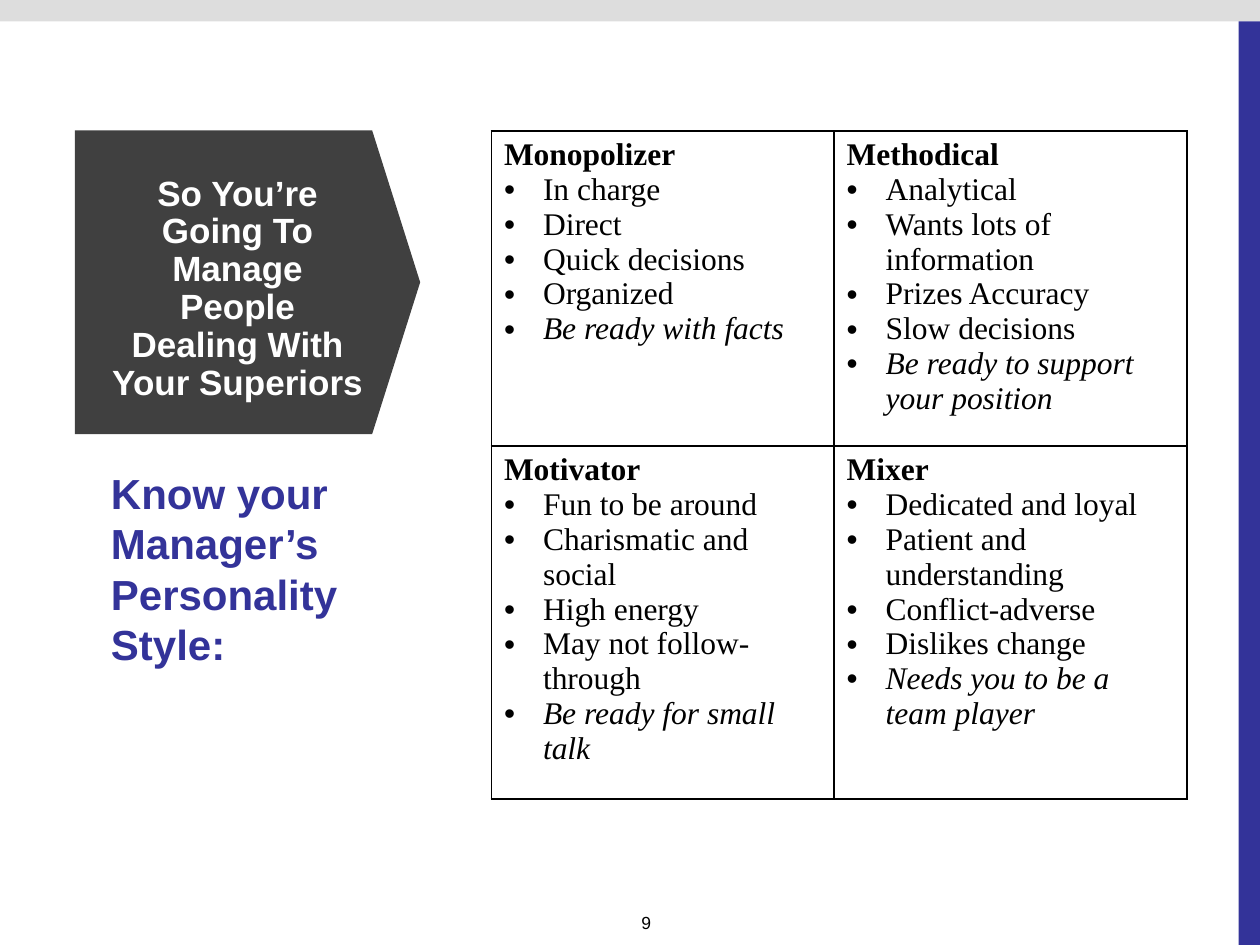
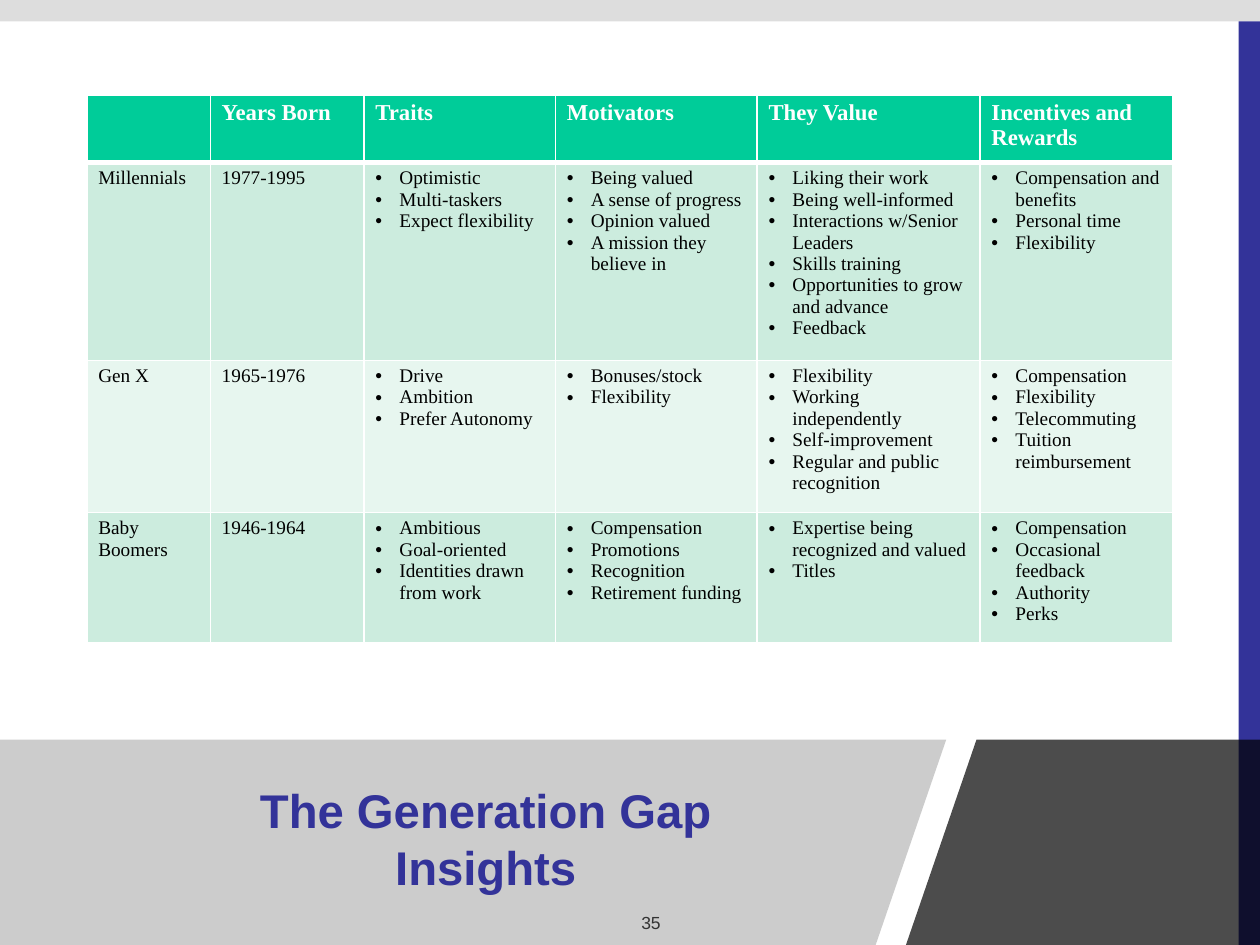
"""Build two training slides: manager personality styles and generation gaps."""
from dataclasses import dataclass

from lxml import etree
from pptx import Presentation
from pptx.dml.color import RGBColor
from pptx.enum.shapes import MSO_SHAPE
from pptx.enum.text import MSO_ANCHOR, PP_ALIGN
from pptx.oxml.ns import qn
from pptx.util import Inches, Pt

RECTANGLE = MSO_SHAPE.RECTANGLE
DOWN_ARROW = MSO_SHAPE.DOWN_ARROW
TOP, MIDDLE = MSO_ANCHOR.TOP, MSO_ANCHOR.MIDDLE
LEFT, CENTER = PP_ALIGN.LEFT, PP_ALIGN.CENTER

NAVY, CHARCOAL, SILVER = "333399", "404040", "DDDDDD"
BLACK, WHITE, GRAY = "000000", "FFFFFF", "808080"
GREEN, MINT, PALE_MINT = "00CC99", "CCECDE", "E7F6EF"
SANS, SERIF = "Arial", "Times New Roman"


@dataclass(frozen=True)
class Box:
    """A position and size in inches."""
    left: float
    top: float
    width: float
    height: float

    def lengths(self) -> tuple:
        """Return left, top, width and height as lengths."""
        return tuple(map(Inches, (self.left, self.top, self.width, self.height)))


@dataclass(frozen=True)
class TextStyle:
    """The look of a run."""
    size: float
    color: str
    bold: bool = False
    italic: bool = False
    font: str = SERIF


@dataclass(frozen=True)
class CellLayout:
    """Margins, bullet indent and border colour of a table's cells."""
    side: float
    edge: float
    indent: float
    border: str


@dataclass(frozen=True)
class PersonalityStyle:
    """A manager's style, its traits and the advice for it."""
    name: str
    traits: tuple
    advice: str


@dataclass(frozen=True)
class Generation:
    """A generation, its birth years and its four bulleted lists."""
    name: str
    years: str
    lists: tuple


PAGE_NUMBER = TextStyle(10, BLACK, font=SANS)
ARROW_TITLE = TextStyle(20, WHITE, bold=True, font=SANS)
SUBTITLE = TextStyle(24, NAVY, bold=True, font=SANS)
BAND_TITLE = TextStyle(27, NAVY, bold=True, font=SANS)
STYLE_NAME = TextStyle(18, BLACK, bold=True)
STYLE_TRAIT = TextStyle(18, BLACK)
STYLE_ADVICE = TextStyle(18, BLACK, italic=True)
HEADER = TextStyle(13, WHITE, bold=True)
DETAIL = TextStyle(11, BLACK)

STYLE_LAYOUT = CellLayout(0.1, 0.05, 0.31, BLACK)
GENERATION_LAYOUT = CellLayout(0.09, 0.04, 0.19, WHITE)

PERSONALITY_GRID = (
    (PersonalityStyle("Monopolizer",
                      ("In charge", "Direct", "Quick decisions", "Organized"),
                      "Be ready with facts"),
     PersonalityStyle("Methodical",
                      ("Analytical", "Wants lots of information",
                       "Prizes Accuracy", "Slow decisions"),
                      "Be ready to support your position")),
    (PersonalityStyle("Motivator",
                      ("Fun to be around", "Charismatic and social",
                       "High energy", "May not follow-through"),
                      "Be ready for small talk"),
     PersonalityStyle("Mixer",
                      ("Dedicated and loyal", "Patient and understanding",
                       "Conflict-adverse", "Dislikes change"),
                      "Needs you to be a team player")),
)

HEADINGS = ("", "Years Born", "Traits", "Motivators", "They Value",
            "Incentives and Rewards")
GENERATIONS = (
    Generation("Millennials", "1977-1995", (
        ("Optimistic", "Multi-taskers", "Expect flexibility"),
        ("Being valued", "A sense of progress", "Opinion valued",
         "A mission they believe in"),
        ("Liking their work", "Being well-informed",
         "Interactions w/Senior Leaders", "Skills training",
         "Opportunities to grow and advance", "Feedback"),
        ("Compensation and benefits", "Personal time", "Flexibility"))),
    Generation("Gen X", "1965-1976", (
        ("Drive", "Ambition", "Prefer Autonomy"),
        ("Bonuses/stock", "Flexibility"),
        ("Flexibility", "Working independently", "Self-improvement",
         "Regular and public recognition"),
        ("Compensation", "Flexibility", "Telecommuting",
         "Tuition reimbursement"))),
    Generation("Baby Boomers", "1946-1964", (
        ("Ambitious", "Goal-oriented", "Identities drawn from work"),
        ("Compensation", "Promotions", "Recognition", "Retirement funding"),
        ("Expertise being recognized and valued", "Titles"),
        ("Compensation", "Occasional feedback", "Authority", "Perks"))),
)


def rgb(color: str) -> RGBColor:
    """Turn a hex string into a colour."""
    return RGBColor.from_string(color)


def paint(shape, color: str, opacity: int = 100) -> None:
    """Fill a shape without line or shadow, at an opacity in percent."""
    shape.shadow.inherit = False
    shape.line.fill.background()
    shape.fill.solid()
    shape.fill.fore_color.rgb = rgb(color)
    if opacity < 100:
        fill_color = shape.element.spPr.find(f".//{qn('a:srgbClr')}")
        etree.SubElement(fill_color, qn("a:alpha"), val=str(opacity * 1000))


def add_block(slide, kind, box: Box, color: str):
    """Add a plain preset shape."""
    shape = slide.shapes.add_shape(kind, *box.lengths())
    paint(shape, color)
    return shape


def add_panel(slide, points: tuple, color: str, opacity: int) -> None:
    """Add a translucent polygon through points in inches."""
    corners = [(Inches(x), Inches(y)) for x, y in points]
    builder = slide.shapes.build_freeform(*corners[0])
    builder.add_line_segments(corners[1:], close=True)
    paint(builder.convert_to_shape(), color, opacity)


def add_run(paragraph, text: str, style: TextStyle) -> None:
    """Add one styled run."""
    run = paragraph.add_run()
    run.text = text
    run.font.name = style.font
    run.font.size = Pt(style.size)
    run.font.bold = style.bold
    run.font.italic = style.italic
    run.font.color.rgb = rgb(style.color)


def add_text(slide, box: Box, lines: tuple, style: TextStyle, anchor=TOP,
             alignment=LEFT, spacing: float = 1.0) -> None:
    """Add a text box holding one paragraph with line breaks."""
    frame = slide.shapes.add_textbox(*box.lengths()).text_frame
    frame.word_wrap = True
    frame.vertical_anchor = anchor
    frame.margin_left = frame.margin_right = Inches(0.09)
    frame.margin_top = frame.margin_bottom = Inches(0.04)
    paragraph = frame.paragraphs[0]
    paragraph.alignment = alignment
    paragraph.line_spacing = spacing
    for index, line in enumerate(lines):
        if index:
            paragraph.add_line_break()
        add_run(paragraph, line, style)


def add_bullet(paragraph, indent: float) -> None:
    """Give a paragraph a hanging round bullet."""
    properties = paragraph._p.get_or_add_pPr()
    properties.set("marL", str(Inches(indent)))
    properties.set("indent", str(-Inches(indent)))
    etree.SubElement(properties, qn("a:buFont"), typeface=SANS)
    etree.SubElement(properties, qn("a:buChar"), char="•")


def add_borders(cell, color: str, bottom: float = 1, top: float = 1) -> None:
    """Draw the four borders of a cell, with widths in points."""
    properties = cell._tc.get_or_add_tcPr()
    for side, width in (("L", 1), ("R", 1), ("T", top), ("B", bottom)):
        line = etree.SubElement(properties, qn(f"a:ln{side}"), w=str(Pt(width)))
        fill = etree.SubElement(line, qn("a:solidFill"))
        etree.SubElement(fill, qn("a:srgbClr"), val=color)


def fill_cell(cell, entries: list, layout: CellLayout, color: str = "") -> None:
    """Write (text, style, bulleted) entries into a cell and colour it."""
    cell.margin_left = cell.margin_right = Inches(layout.side)
    cell.margin_top = cell.margin_bottom = Inches(layout.edge)
    if color:
        cell.fill.solid()
        cell.fill.fore_color.rgb = rgb(color)
    else:
        cell.fill.background()
    frame = cell.text_frame
    for index, (text, style, bulleted) in enumerate(entries):
        paragraph = frame.add_paragraph() if index else frame.paragraphs[0]
        if bulleted:
            add_bullet(paragraph, layout.indent)
        if text:
            add_run(paragraph, text, style)


def add_grid(slide, left: float, top: float, widths: tuple, heights: tuple):
    """Add an unbanded table with the given column widths and row heights."""
    box = Box(left, top, sum(widths), sum(heights))
    table = slide.shapes.add_table(len(heights), len(widths), *box.lengths()).table
    table.first_row = table.horz_banding = False
    for column, width in zip(table.columns, widths):
        column.width = Inches(width)
    for row, height in zip(table.rows, heights):
        row.height = Inches(height)
    return table


def add_base_slide(presentation, number: int):
    """Add a blank slide with the top band, side band and page number."""
    slide = presentation.slides.add_slide(presentation.slide_layouts[6])
    add_block(slide, RECTANGLE, Box(0, 0, 10, 0.17), SILVER)
    add_block(slide, RECTANGLE, Box(9.83, 0.17, 0.17, 7.33), NAVY)
    add_text(slide, Box(5, 7.2, 0.5, 0.25), (str(number),), PAGE_NUMBER)
    return slide


def build_personality_slide(presentation) -> None:
    """Build the slide on managers' personality styles."""
    slide = add_base_slide(presentation, 9)
    arrow = add_block(slide, DOWN_ARROW, Box(0.76, 0.87, 2.41, 2.74), CHARCOAL)
    arrow.rotation = 270
    arrow.adjustments[0], arrow.adjustments[1] = 1, 0.158
    add_text(slide, Box(0.79, 1.32, 2.19, 1.95),
             ("So You’re Going To Manage People", "Dealing With Your Superiors"),
             ARROW_TITLE, MIDDLE, CENTER, 0.9)
    add_text(slide, Box(0.79, 3.67, 2.19, 2.65),
             ("Know your Manager’s Personality Style:",), SUBTITLE)
    table = add_grid(slide, 3.9, 1.04, (2.72, 2.8), (2.49, 2.79))
    for row, styles in enumerate(PERSONALITY_GRID):
        for column, style in enumerate(styles):
            cell = table.cell(row, column)
            entries = [(style.name, STYLE_NAME, False)]
            entries += [(trait, STYLE_TRAIT, True) for trait in style.traits]
            entries.append((style.advice, STYLE_ADVICE, True))
            add_borders(cell, STYLE_LAYOUT.border)
            fill_cell(cell, entries, STYLE_LAYOUT)


def build_generation_slide(presentation) -> None:
    """Build the slide comparing the generations."""
    slide = add_base_slide(presentation, 35)
    add_panel(slide, ((0, 5.87), (7.51, 5.87), (6.95, 7.5), (0, 7.5)), GRAY, 40)
    add_text(slide, Box(0.69, 6.05, 6.33, 1.2), ("The Generation Gap", "Insights"),
             BAND_TITLE, MIDDLE, CENTER)
    add_panel(slide, ((7.75, 5.87), (10, 5.87), (10, 7.5), (7.19, 7.5)), BLACK, 70)
    table = add_grid(slide, 0.69, 0.76, (0.98, 1.22, 1.52, 1.6, 1.77, 1.53),
                     (0.53, 1.57, 1.21, 1.03))
    for column, heading in enumerate(HEADINGS):
        cell = table.cell(0, column)
        add_borders(cell, GENERATION_LAYOUT.border, bottom=3)
        fill_cell(cell, [(heading, HEADER, False)], GENERATION_LAYOUT, GREEN)
    for row, generation in enumerate(GENERATIONS, start=1):
        contents = [[(text, DETAIL, False)]
                    for text in (generation.name, generation.years)]
        contents += [[(item, DETAIL, True) for item in items]
                     for items in generation.lists]
        for column, entries in enumerate(contents):
            cell = table.cell(row, column)
            add_borders(cell, GENERATION_LAYOUT.border, top=3 if row == 1 else 1)
            fill_cell(cell, entries, GENERATION_LAYOUT,
                      MINT if row % 2 else PALE_MINT)


def main() -> None:
    """Build and save the presentation."""
    presentation = Presentation()
    presentation.slide_width, presentation.slide_height = Inches(10), Inches(7.5)
    build_personality_slide(presentation)
    build_generation_slide(presentation)
    presentation.save("out.pptx")


if __name__ == "__main__":
    main()
